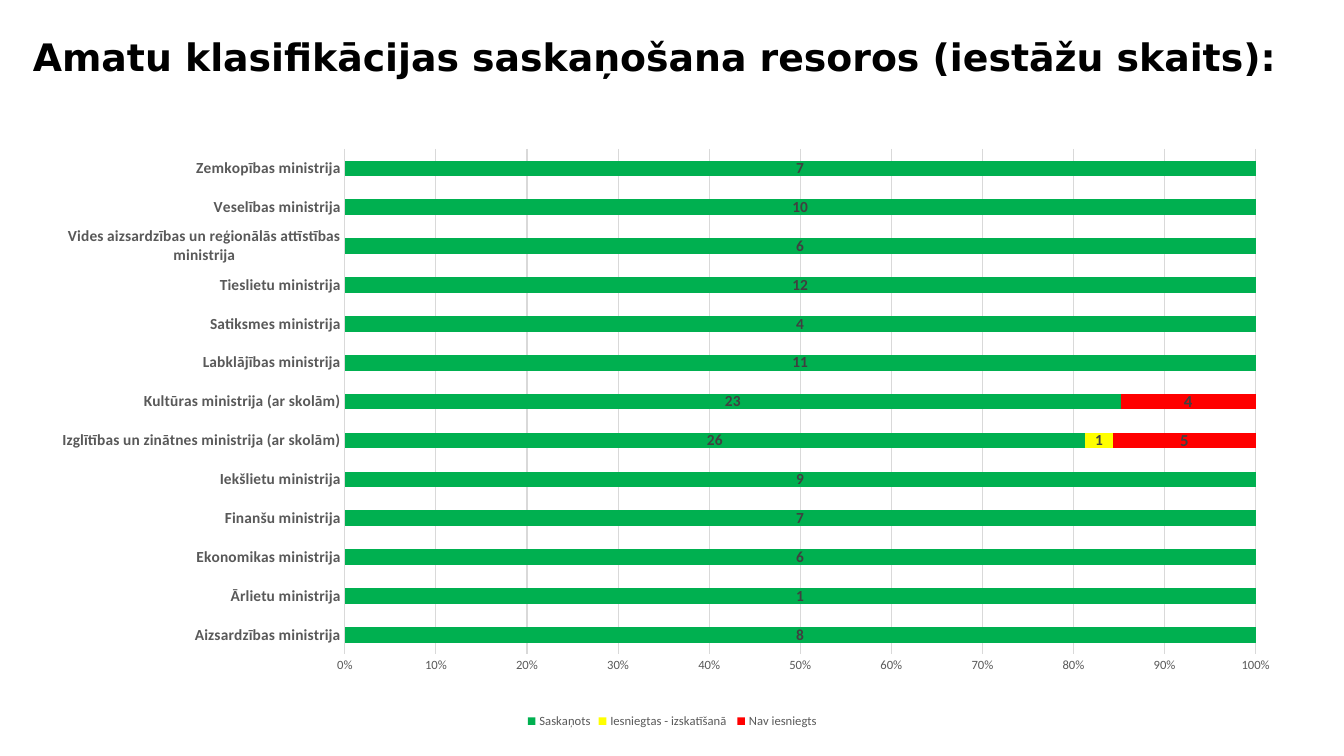
import pptx
import pptx.chart.data
import pptx.dml.color
import pptx.enum.chart
import pptx.enum.text
import pptx.oxml
import pptx.oxml.ns
import pptx.util
from pptx.util import Cm

COLORS = {
    "title": "000000",
    "axis": "595959",
    "label": "404040",
    "grid": "D9D9D9",
    "agreed": "00B050",
    "in_review": "FFFF00",
    "missing": "FF0000",
}
AGREED_BY_MINISTRY = {
    "Aizsardzības ministrija": 8,
    "Ārlietu ministrija": 1,
    "Ekonomikas ministrija": 6,
    "Finanšu ministrija": 7,
    "Iekšlietu ministrija": 9,
    "Izglītības un zinātnes ministrija (ar skolām)": 26,
    "Kultūras ministrija (ar skolām)": 23,
    "Labklājības ministrija": 11,
    "Satiksmes ministrija": 4,
    "Tieslietu ministrija": 12,
    "Vides aizsardzības un reģionālās attīstības ministrija": 6,
    "Veselības ministrija": 10,
    "Zemkopības ministrija": 7,
}
IN_REVIEW = {"Izglītības un zinātnes ministrija (ar skolām)": 1}
MISSING = {
    "Izglītības un zinātnes ministrija (ar skolām)": 5,
    "Kultūras ministrija (ar skolām)": 4,
}
STATUSES = [
    ("Saskaņots", AGREED_BY_MINISTRY, "agreed", 11),
    ("Iesniegtas - izskatīšanā ", IN_REVIEW, "in_review", 11),
    ("Nav iesniegts ", MISSING, "missing", 12),
]
PLOT_AREA = {"x": 0.24, "y": 0.03, "w": 0.72, "h": 0.84}


def rgb(name):
    """Return the palette colour called name."""
    return pptx.dml.color.RGBColor.from_string(COLORS[name])


def style_font(font, size, color, bold=False, face="Calibri"):
    """Apply face, size, colour and weight to a font."""
    font.name = face
    font.size = pptx.util.Pt(size)
    font.bold = bold
    font.color.rgb = rgb(color)


def add_text(slide, text, box, line_spacing=1.0, **font_format):
    """Place one vertically centred paragraph in a box."""
    frame = slide.shapes.add_textbox(*box).text_frame
    frame.word_wrap = True
    frame.vertical_anchor = pptx.enum.text.MSO_ANCHOR.MIDDLE
    paragraph = frame.paragraphs[0]
    paragraph.line_spacing = line_spacing
    run = paragraph.add_run()
    run.text = text
    style_font(run.font, **font_format)


def set_plot_area(chart, fractions):
    """Fix the inner plot area as fractions of the chart."""
    plot_area = chart._chartSpace.chart.plotArea
    for layout in plot_area.findall(pptx.oxml.ns.qn("c:layout")):
        plot_area.remove(layout)
    settings = '<c:layoutTarget val="inner"/><c:xMode val="edge"/><c:yMode val="edge"/>'
    settings += "".join(f'<c:{key} val="{value}"/>' for key, value in fractions.items())
    plot_area.insert(0, pptx.oxml.parse_xml(
        f'<c:layout {pptx.oxml.ns.nsdecls("c")}>'
        f"<c:manualLayout>{settings}</c:manualLayout></c:layout>"
    ))


def style_axis(axis, size, bold=False):
    """Hide an axis line and its ticks and format its labels."""
    axis.major_tick_mark = pptx.enum.chart.XL_TICK_MARK.NONE
    axis.minor_tick_mark = pptx.enum.chart.XL_TICK_MARK.NONE
    axis.format.line.fill.background()
    style_font(axis.tick_labels.font, size, "axis", bold)


def add_status_chart(slide, box):
    """Draw the share of institutions by status for each ministry."""
    statuses = pptx.chart.data.CategoryChartData()
    statuses.categories = list(AGREED_BY_MINISTRY)
    for name, counts, _, _ in STATUSES:
        statuses.add_series(name, [counts.get(ministry) for ministry in AGREED_BY_MINISTRY])
    chart = slide.shapes.add_chart(
        pptx.enum.chart.XL_CHART_TYPE.BAR_STACKED_100, *box, statuses
    ).chart
    style_font(chart.font, 10, "title")
    chart.has_title = False
    set_plot_area(chart, PLOT_AREA)

    bars = chart.plots[0]
    bars.gap_width = 150
    bars.overlap = 100
    bars.vary_by_categories = False
    for series, (_, _, color, label_size) in zip(bars.series, STATUSES):
        series.format.fill.solid()
        series.format.fill.fore_color.rgb = rgb(color)
        series.data_labels.show_value = True
        style_font(series.data_labels.font, label_size, "label", bold=True)

    style_axis(chart.category_axis, 11, bold=True)
    shares = chart.value_axis
    style_axis(shares, 9)
    shares.minimum_scale, shares.maximum_scale, shares.major_unit = 0, 1, 0.1
    shares.tick_labels.number_format = "0%"
    shares.tick_labels.number_format_is_linked = False
    shares.has_major_gridlines = True
    shares.major_gridlines.format.line.color.rgb = rgb("grid")
    shares.major_gridlines.format.line.width = pptx.util.Pt(0.75)

    chart.has_legend = True
    chart.legend.position = pptx.enum.chart.XL_LEGEND_POSITION.BOTTOM
    chart.legend.include_in_layout = False
    style_font(chart.legend.font, 9, "axis")


def build_status_slide(deck):
    """Add the slide with its heading and chart."""
    slide = deck.slides.add_slide(deck.slide_layouts[6])
    add_text(
        slide, "Amatu klasifikācijas saskaņošana resoros (iestāžu skaits):",
        (Cm(0.58), Cm(0.58), Cm(32.7), Cm(1.85)), line_spacing=0.9,
        size=27, color="title", bold=True, face="DejaVu Sans",
    )
    add_status_chart(slide, (Cm(1.04), Cm(3.3), Cm(31.88), Cm(15.16)))


def main():
    """Build and save the presentation."""
    deck = pptx.Presentation()
    deck.slide_width, deck.slide_height = Cm(33.87), Cm(19.05)
    build_status_slide(deck)
    deck.save("out.pptx")


if __name__ == "__main__":
    main()
